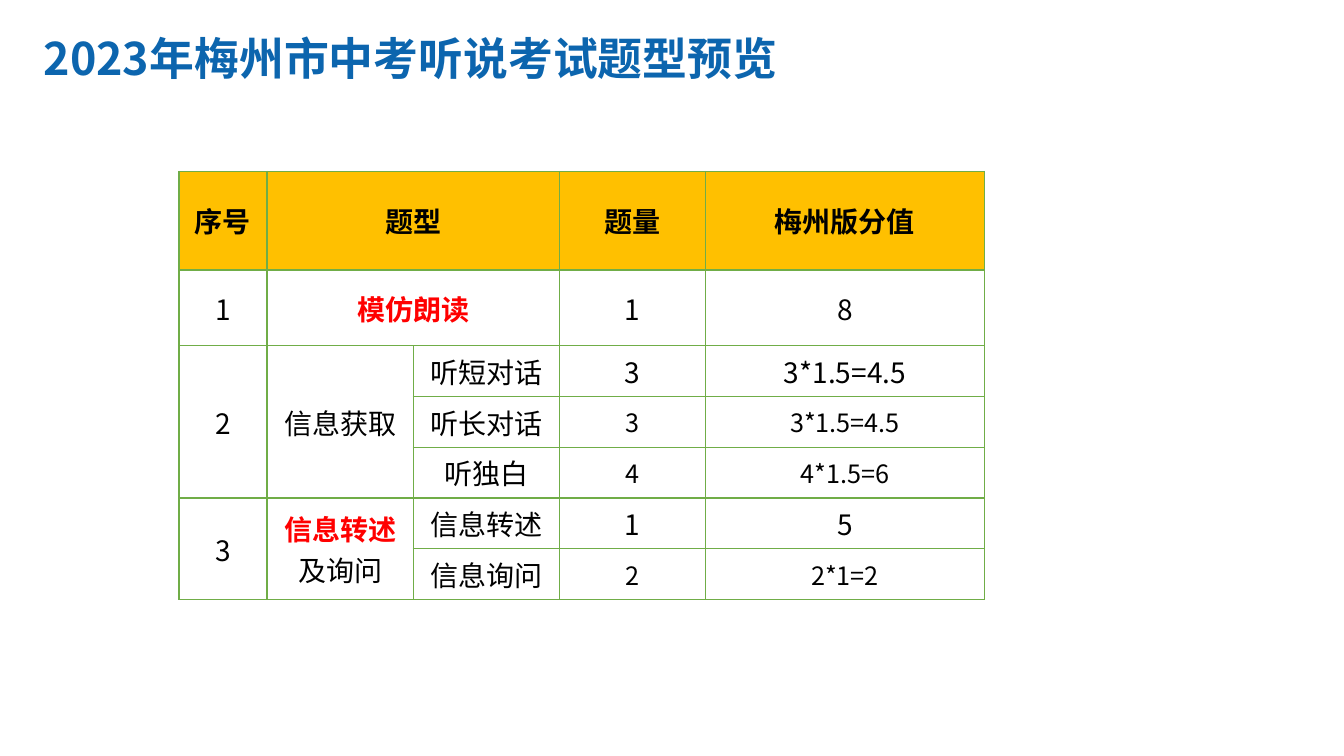
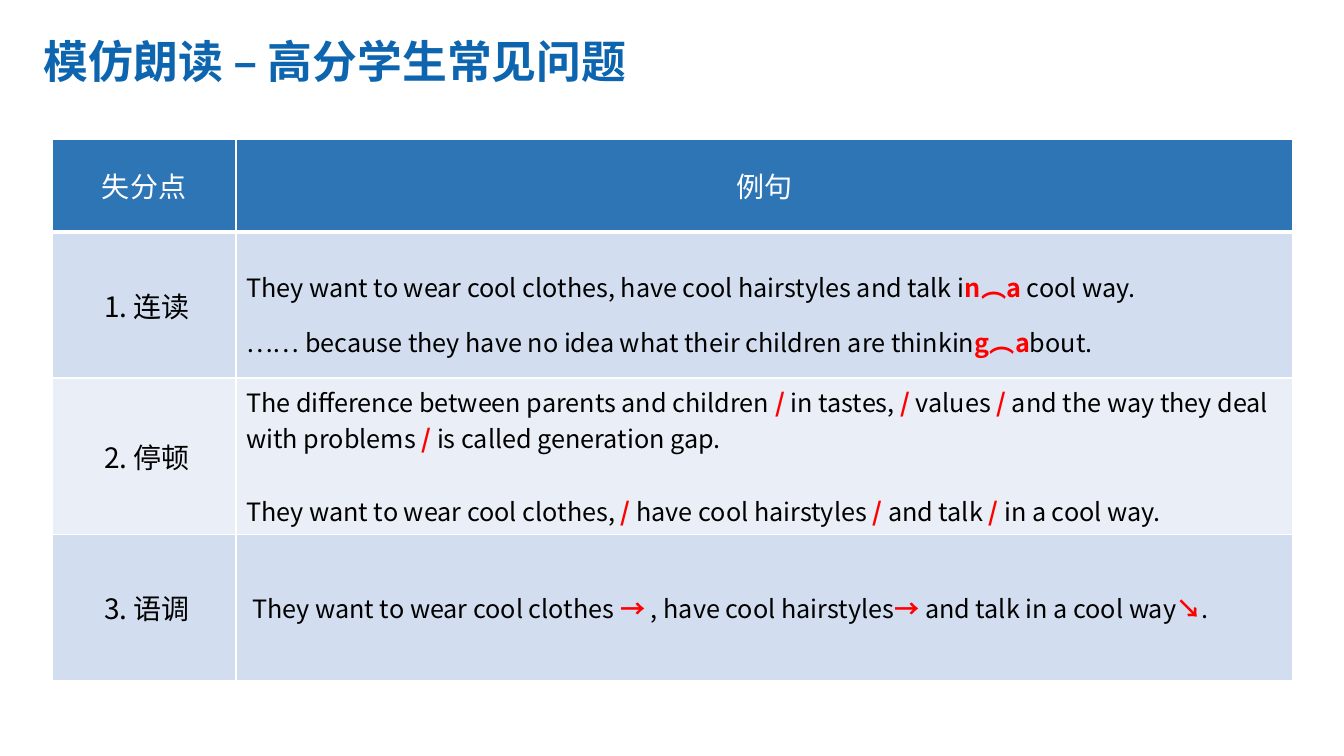
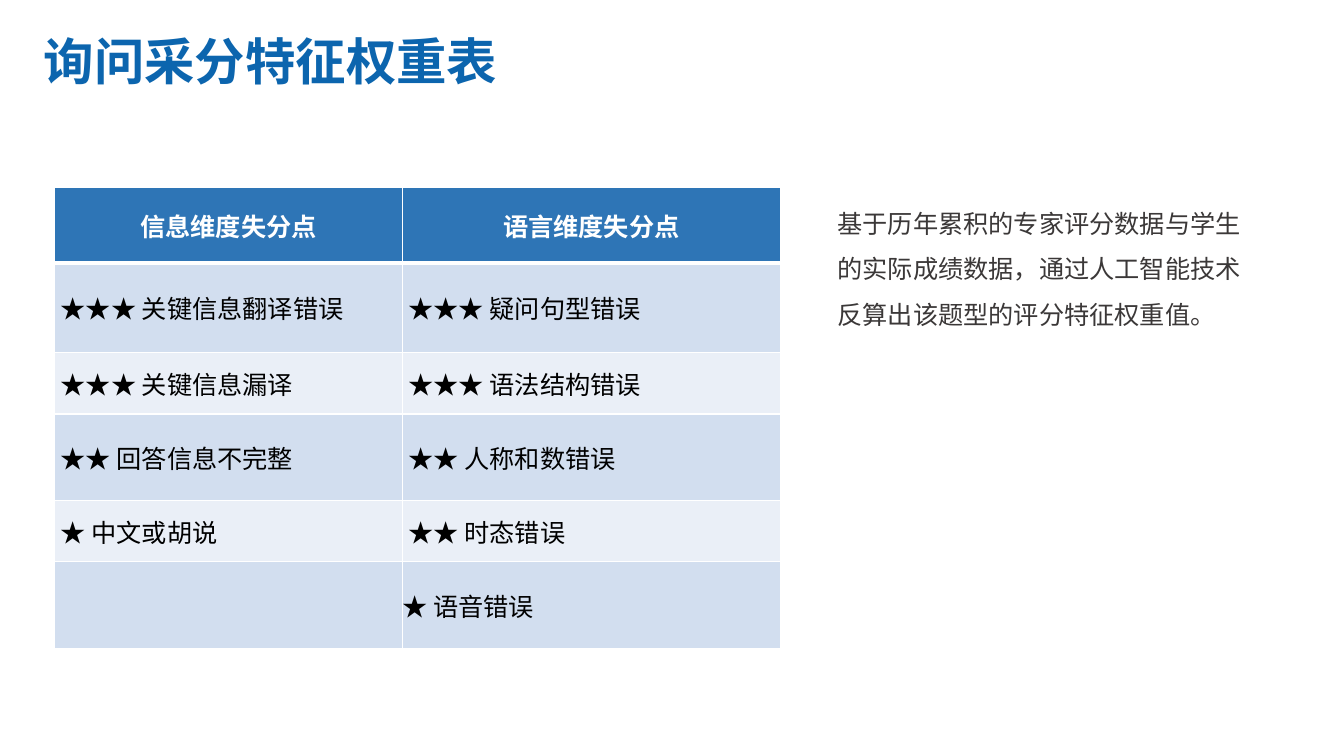
from lxml.etree import SubElement
from pptx import Presentation
from pptx.dml.color import RGBColor
from pptx.enum.text import MSO_ANCHOR, MSO_AUTO_SIZE, PP_ALIGN
from pptx.oxml.ns import qn
from pptx.util import Inches, Pt

FONT = "Noto Sans CJK SC"
TITLE_BLUE, HEADER_BLUE, AMBER = "0C65AE", "2E75B6", "FFC000"
BANDS = ("D2DEEF", "EAEFF7")
GREEN, RED, BLACK, WHITE, GREY = "70AD47", "FF0000", "000000", "FFFFFF", "3B3838"
GRID_COLUMNS, GRID_ROWS = 160, 90


def color(value):
    """Turn a hex string into a colour."""
    return RGBColor.from_string(value)


class SlideBuilder:
    """Hold the deck, its shared style and the current slide."""

    def __init__(self):
        """Start a widescreen deck."""
        self.deck = Presentation()
        self.deck.slide_width, self.deck.slide_height = Inches(13.33), Inches(7.5)
        self.page = None

    def across(self, columns):
        """Convert grid columns to a length."""
        return round(self.deck.slide_width * columns / GRID_COLUMNS)

    def down(self, rows):
        """Convert grid rows to a length."""
        return round(self.deck.slide_height * rows / GRID_ROWS)

    def place(self, box, left, top, width, height):
        """Move a placeholder onto the grid and stop it from shrinking its text."""
        box.left, box.top = self.across(left), self.down(top)
        box.width, box.height = self.across(width), self.down(height)
        box.text_frame.auto_size = MSO_AUTO_SIZE.NONE
        box.text_frame.vertical_anchor = MSO_ANCHOR.TOP

    def add_text(self, frame, text, size, ink, bold=False, align=PP_ALIGN.LEFT):
        """Add lines of text, with the parts between bars in bold red."""
        for number, line in enumerate(text.split("\n")):
            para = frame.add_paragraph() if number else frame.paragraphs[0]
            para.alignment = align
            for index, part in enumerate(line.split("|")):
                if not part:
                    continue
                marked = index % 2 == 1
                span = para.add_run()
                span.text = part
                span.font.size = Pt(size)
                span.font.bold = bold or marked
                span.font.color.rgb = color(RED if marked else ink)
                span.font.name = FONT
                SubElement(span._r.get_or_add_rPr(), qn("a:ea"), typeface=FONT)

    def add_page(self, title, size=32, top=3, layout=5):
        """Add a slide with the shared title style."""
        self.page = self.deck.slides.add_slide(self.deck.slide_layouts[layout])
        box = self.page.shapes.title
        self.place(box, 4, top, 126, 9.4)
        self.add_text(box.text_frame, title, size, TITLE_BLUE, bold=True)

    def add_body(self, text, left, top, width, height):
        """Fill the body placeholder with plain, widely spaced text."""
        box = self.page.placeholders[1]
        self.place(box, left, top, width, height)
        self.add_text(box.text_frame, text, 18, GREY)
        for para in box.text_frame.paragraphs:
            properties = para._p.get_or_add_pPr()
            properties.set("marL", "0")
            properties.set("indent", "0")
            SubElement(properties, qn("a:buNone"))
            para.line_spacing = 1.5
            para.space_before = Pt(0)

    def add_border(self, cell, ink, top_width, bottom_width):
        """Draw the four sides of a cell."""
        properties = cell._tc.get_or_add_tcPr()
        for side, width in (("L", 1), ("R", 1), ("T", top_width), ("B", bottom_width)):
            line = SubElement(properties, qn(f"a:ln{side}"), w=str(Pt(width)))
            fill = SubElement(line, qn("a:solidFill"))
            SubElement(fill, qn("a:srgbClr"), val=ink)

    def add_table(self, left, top, widths, heights, rows, header, border, rule,
                  bands=None, header_ink=WHITE, header_bold=True, inset=0.1,
                  size=20, small=(), centred=()):
        """Add a table; small holds 18 point cells and centred holds body columns."""
        frame = self.page.shapes.add_table(
            len(rows), len(widths), self.across(left), self.down(top),
            self.across(sum(widths)), self.down(sum(heights)))
        table = frame.table
        table.horz_banding = False
        for column, width in zip(table.columns, widths):
            column.width = self.across(width)
        for row, height in zip(table.rows, heights):
            row.height = self.down(height)
        for y, row in enumerate(rows):
            for x, text in enumerate(row):
                cell = table.cell(y, x)
                cell.margin_left = cell.margin_right = Inches(inset)
                cell.margin_top = cell.margin_bottom = Inches(inset / 2)
                cell.vertical_anchor = MSO_ANCHOR.MIDDLE
                self.add_border(cell, border, rule if y == 1 else 1, 1 if y else rule)
                if y and not bands:
                    cell.fill.background()
                else:
                    cell.fill.solid()
                    cell.fill.fore_color.rgb = color(bands[(y - 1) % 2] if y else header)
                middle = y == 0 or x in centred
                self.add_text(cell.text_frame, text, 18 if (y, x) in small else size,
                              BLACK if y else header_ink, header_bold and y == 0,
                              PP_ALIGN.CENTER if middle else PP_ALIGN.LEFT)
        return table


def build_overview(builder):
    """Build the list of question types."""
    builder.add_page("2023年梅州市中考听说考试题型预览")
    rows = [
        ("序号", "题型", "", "题量", "梅州版分值"),
        ("1", "|模仿朗读|", "", "1", "8"),
        ("2", "信息获取", "听短对话", "3", "3*1.5=4.5"),
        ("", "", "听长对话", "3", "3*1.5=4.5"),
        ("", "", "听独白", "4", "4*1.5=6"),
        ("3", "|信息转述|及询问", "信息转述", "1", "5"),
        ("", "", "信息询问", "2", "2*1=2"),
    ]
    table = builder.add_table(
        21.3, 20.4, [10.5, 17.4, 17.4, 17.4, 33.2], [11.75, 9] + [6.05] * 5, rows,
        AMBER, GREEN, 2, header_ink=BLACK, centred=range(5),
        small=[(y, x) for y in (3, 4, 6) for x in (3, 4)])
    merges = [(0, 1, 0, 2), (1, 1, 1, 2), (2, 0, 4, 0), (2, 1, 4, 1),
              (5, 0, 6, 0), (5, 1, 6, 1)]
    for top, left, bottom, right in merges:
        table.cell(top, left).merge(table.cell(bottom, right))


def build_problems(builder):
    """Build the table of reading problems with sample sentences."""
    builder.add_page("模仿朗读 – 高分学生常见问题", top=3.4)
    rows = [
        ("失分点", "例句"),
        ("1. 连读",
         "They want to wear cool clothes, have cool hairstyles and talk i|n︵a |cool way.\n"
         "…… because they have no idea what their children are thinkin|g︵a|bout."),
        ("2. 停顿",
         "The difference between parents and children |/| in tastes, |/| values |/| and the "
         "way they deal with problems |/| is called generation gap.\n"
         "They want to wear cool clothes, |/| have cool hairstyles |/| and talk |/ |"
         "in a cool way."),
        ("3. 语调",
         "They want to wear cool clothes |→ |, have cool hairstyles|→| and talk in a cool "
         "way|↘|."),
    ]
    table = builder.add_table(
        6.2, 16.6, [21.9, 125.8], [11, 17.4, 18.6, 17.4], rows, HEADER_BLUE, WHITE, 3,
        bands=BANDS, header_bold=False, centred=[0], small=[(y, 1) for y in (1, 2, 3)])
    for para in table.cell(1, 1).text_frame.paragraphs:
        para.line_spacing = 1.5
    table.cell(2, 1).text_frame.paragraphs[1].space_before = Pt(26)
    for y, x in ((1, 0), (2, 0), (3, 0), (3, 1)):
        table.cell(y, x).margin_left = Inches(0.16)


def build_weights(builder):
    """Build the table of scoring weights and its explanation."""
    builder.add_page("询问采分特征权重表", size=36, layout=1)
    builder.add_body(
        "基于历年累积的专家评分数据与学生的实际成绩数据，通过人工智能技术反算出该题型的评分特征权重值。",
        98.5, 22.4, 52.6, 17)
    rows = [
        ("信息维度失分点", "语言维度失分点"),
        ("★★★ 关键信息翻译错误", "★★★ 疑问句型错误"),
        ("★★★ 关键信息漏译", "★★★ 语法结构错误"),
        ("★★ 回答信息不完整", "★★ 人称和数错误"),
        ("★ 中文或胡说", "★★ 时态错误"),
        ("", "★ 语音错误"),
    ]
    table = builder.add_table(
        6.5, 22.3, [41.4, 45], [9, 10.7, 7.3, 10.3, 7.3, 10.3], rows, HEADER_BLUE,
        WHITE, 3, bands=BANDS, inset=0, size=18)
    for y in range(1, 5):
        for x in range(2):
            table.cell(y, x).margin_left = Inches(0.06)


def main():
    """Build and save the deck."""
    builder = SlideBuilder()
    build_overview(builder)
    build_problems(builder)
    build_weights(builder)
    builder.deck.save("out.pptx")


if __name__ == "__main__":
    main()
